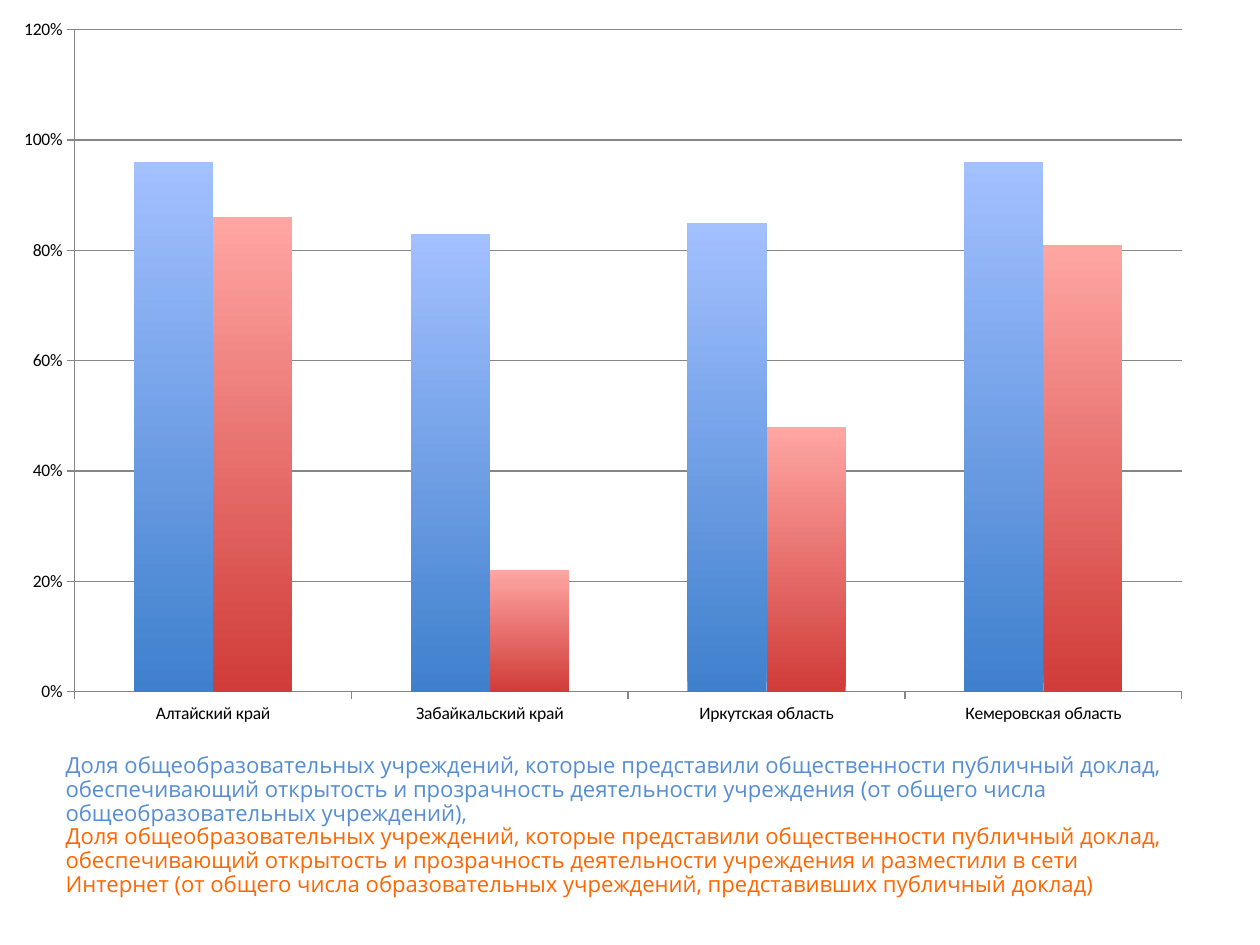
from pptx import Presentation
from pptx.chart.data import CategoryChartData
from pptx.dml.color import RGBColor
from pptx.enum.chart import XL_CHART_TYPE, XL_TICK_MARK
from pptx.enum.text import MSO_ANCHOR, MSO_AUTO_SIZE, PP_ALIGN
from pptx.util import Inches, Pt

COLUMNS = XL_CHART_TYPE.COLUMN_CLUSTERED
TICK_OUT, TICK_NONE = XL_TICK_MARK.OUTSIDE, XL_TICK_MARK.NONE
MIDDLE, LEFT = MSO_ANCHOR.MIDDLE, PP_ALIGN.LEFT
NO_AUTOFIT = MSO_AUTO_SIZE.NONE

REGIONS = ["Алтайский край", "Забайкальский край", "Иркутская область", "Кемеровская область"]
SERIES = [
    ("Series 1", [0.96, 0.83, 0.85, 0.96], ("3F80CD", "A3C0FF")),
    ("Series 2", [0.86, 0.22, 0.48, 0.81], ("D03C39", "FFA6A3")),
]
REPORT = ("Доля общеобразовательных учреждений, которые представили общественности "
          "публичный доклад, обеспечивающий открытость и прозрачность деятельности учреждения ")
LEGEND = [
    (REPORT + "(от общего числа общеобразовательных учреждений),", "558ED5"),
    (REPORT + "и разместили в сети Интернет (от общего числа образовательных учреждений, "
              "представивших публичный доклад)", "FF6600"),
]


def rgb(value):
    return RGBColor.from_string(value)


class SlideBuilder:
    """Holds the style and the current slide, and adds elements to it."""

    title_font, chart_font = "Open Sans", "Calibri"
    text_color, line_color = "000000", "868686"

    def __init__(self, prs):
        self.s = prs.slides.add_slide(prs.slide_layouts[5])

    def title(self, paragraphs, x, y, w, h):
        sp = self.s.shapes.title
        sp.left, sp.top, sp.width, sp.height = map(Inches, (x, y, w, h))
        tf = sp.text_frame
        tf.word_wrap = True
        tf.auto_size = NO_AUTOFIT
        tf.vertical_anchor = MIDDLE
        tf.margin_bottom = Inches(0.26)
        for i, (text, color) in enumerate(paragraphs):
            p = tf.add_paragraph() if i else tf.paragraphs[0]
            p.text = text
            p.alignment = LEFT
            p.line_spacing = 0.9
            p.space_before = Pt(0)
            p.font.name = self.title_font
            p.font.size = Pt(12.6)
            p.font.color.rgb = rgb(color)

    def column_chart(self, categories, series, x, y, w, h):
        data = CategoryChartData(number_format="0%")
        data.categories = categories
        for name, values, _ in series:
            data.add_series(name, values)
        frame = self.s.shapes.add_chart(COLUMNS, *map(Inches, (x, y, w, h)), data)
        chart = frame.chart
        chart.has_legend = False
        chart.has_title = False
        chart.font.name = self.chart_font
        chart.font.size = Pt(10)
        chart.font.color.rgb = rgb(self.text_color)
        plot = chart.plots[0]
        plot.gap_width = 150
        plot.overlap = 0
        plot.vary_by_categories = False
        for ser, (_, _, colors) in zip(plot.series, series):
            self.gradient(ser.format.fill, colors)
        self.axis(chart.category_axis)
        self.value_axis(chart.value_axis)

    def gradient(self, fill, colors):
        fill.gradient()
        fill.gradient_angle = 90
        for stop, color in zip(fill.gradient_stops, colors):
            stop.color.rgb = rgb(color)

    def axis(self, axis):
        axis.major_tick_mark = TICK_OUT
        axis.minor_tick_mark = TICK_NONE
        self.line(axis.format.line)

    def value_axis(self, axis):
        self.axis(axis)
        axis.minimum_scale, axis.maximum_scale, axis.major_unit = 0, 1.2, 0.2
        axis.tick_labels.number_format = "0%"
        axis.tick_labels.number_format_is_linked = False
        axis.has_major_gridlines = True
        self.line(axis.major_gridlines.format.line)

    def line(self, line):
        line.color.rgb = rgb(self.line_color)
        line.width = Pt(0.75)


def main():
    prs = Presentation()
    prs.slide_width, prs.slide_height = Inches(10), Inches(7.5)
    slide = SlideBuilder(prs)
    slide.title(LEGEND, 0.42, 5.79, 9, 1.74)
    slide.column_chart(REGIONS, SERIES, 0, 0.04, 9.57, 5.82)
    prs.save("out.pptx")


if __name__ == "__main__":
    main()
